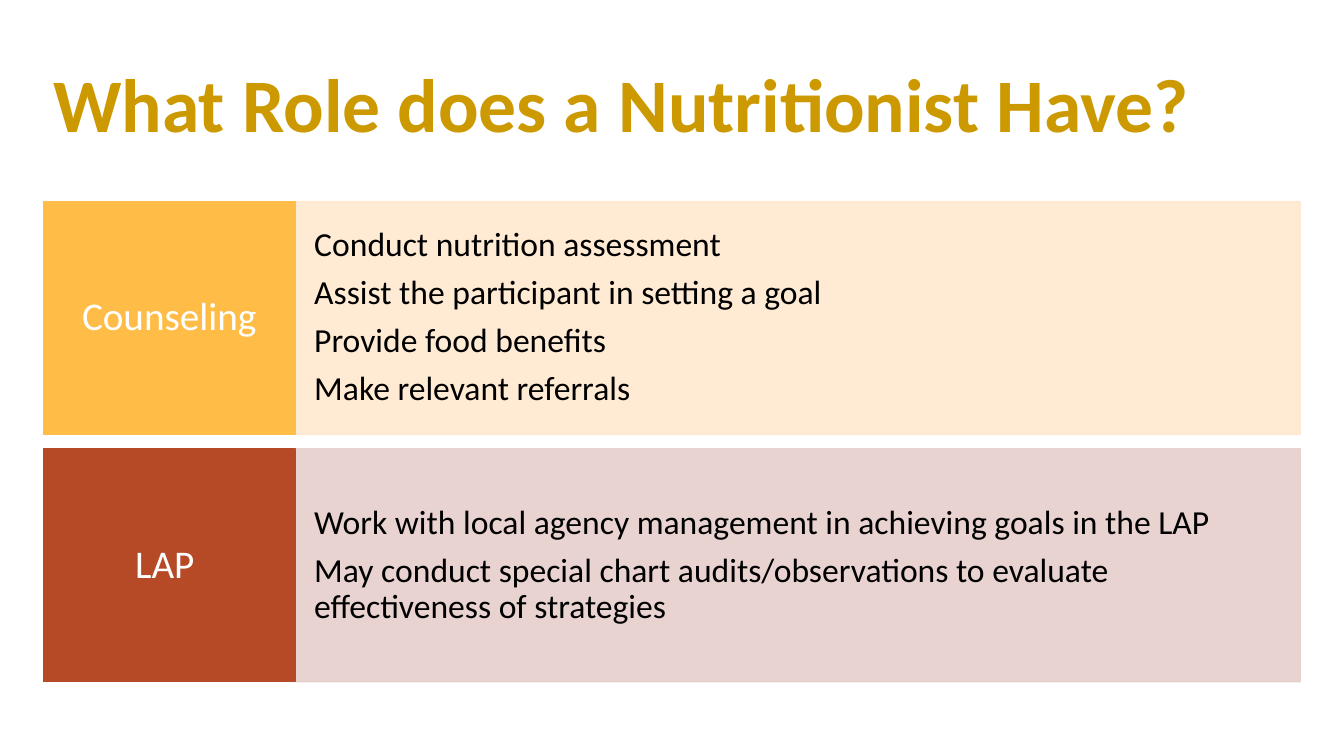
from lxml import etree
from pptx import Presentation
from pptx.dml.color import RGBColor
from pptx.enum.shapes import MSO_SHAPE
from pptx.enum.text import MSO_ANCHOR, PP_ALIGN
from pptx.oxml.ns import qn
from pptx.util import Cm, Pt

RECT = MSO_SHAPE.RECTANGLE
MIDDLE = MSO_ANCHOR.MIDDLE
LEFT, CENTER = PP_ALIGN.LEFT, PP_ALIGN.CENTER
FONT = "Calibri"

EDGE, TOP = 1.09, 5.08
LABEL_W, BODY_W = 6.35, 25.33
ROW_H, PITCH = 5.87, 6.23

ROLES = [
    ("Counseling", "FFBD47", "FFE8CF", [
        "Conduct nutrition assessment",
        "Assist the participant in setting a goal",
        "Provide food benefits",
        "Make relevant referrals",
    ]),
    ("LAP ", "B64926", "E6CFCD", [
        "Work with local agency management in achieving goals in the LAP",
        "May conduct special chart audits/observations to evaluate "
        "effectiveness of strategies",
    ]),
]


def paint(fill, color, alpha=100):
    """Give a fill a solid colour and an opacity in percent."""
    fill.solid()
    fill.fore_color.rgb = RGBColor.from_string(color)
    if alpha < 100:
        tint = fill._xPr.find(f"{qn('a:solidFill')}/{qn('a:srgbClr')}")
        etree.SubElement(tint, qn("a:alpha"), val=str(alpha * 1000))


def write(frame, lines, size, color, bold=False, align=LEFT, after=0):
    """Write one paragraph per line, vertically centred in the frame."""
    frame.word_wrap = True
    frame.vertical_anchor = MIDDLE
    for i, line in enumerate(lines):
        para = frame.paragraphs[0] if i == 0 else frame.add_paragraph()
        para.alignment = align
        para.line_spacing = 0.9
        para.space_before = Pt(0)
        para.space_after = Pt(after)
        run = para.add_run()
        run.text = line
        run.font.name = FONT
        run.font.size = Pt(size)
        run.font.bold = bold
        run.font.color.rgb = RGBColor.from_string(color)


def add_box(slide, left, top, width, color, inset, alpha=100):
    """Add a row-high rectangle and return its text frame."""
    box = slide.shapes.add_shape(RECT, Cm(left), Cm(top), Cm(width), Cm(ROW_H))
    box.shadow.inherit = False
    paint(box.fill, color, alpha)
    box.line.width = Pt(1)
    paint(box.line.fill, color, alpha)
    frame = box.text_frame
    frame.margin_left = frame.margin_right = Cm(inset)
    frame.margin_top = frame.margin_bottom = Cm(0.5)
    return frame


def add_title(slide, text):
    """Place and format the title."""
    title = slide.shapes.title
    title.left, title.top = Cm(EDGE), Cm(0.89)
    title.width, title.height = Cm(31.7), Cm(3.68)
    write(title.text_frame, [text], 54, "CC9900", bold=True)


def add_role(slide, top, name, dark, pale, tasks):
    """Add one row: tasks on a pale panel beside a labelled block."""
    body = add_box(slide, EDGE + LABEL_W, top, BODY_W, pale, 0.48, alpha=90)
    write(body, tasks, 24, "000000", after=8.4)
    label = add_box(slide, EDGE, top, LABEL_W, dark, 0.33)
    write(label, [name], 28, "FFFFFF", align=CENTER, after=9.8)


def main():
    """Build the slide and save it."""
    deck = Presentation()
    deck.slide_width, deck.slide_height = Cm(33.87), Cm(19.05)
    slide = deck.slides.add_slide(deck.slide_layouts[5])
    add_title(slide, "What Role does a Nutritionist Have?")
    for i, role in enumerate(ROLES):
        add_role(slide, TOP + i * PITCH, *role)
    deck.save("out.pptx")


if __name__ == "__main__":
    main()
